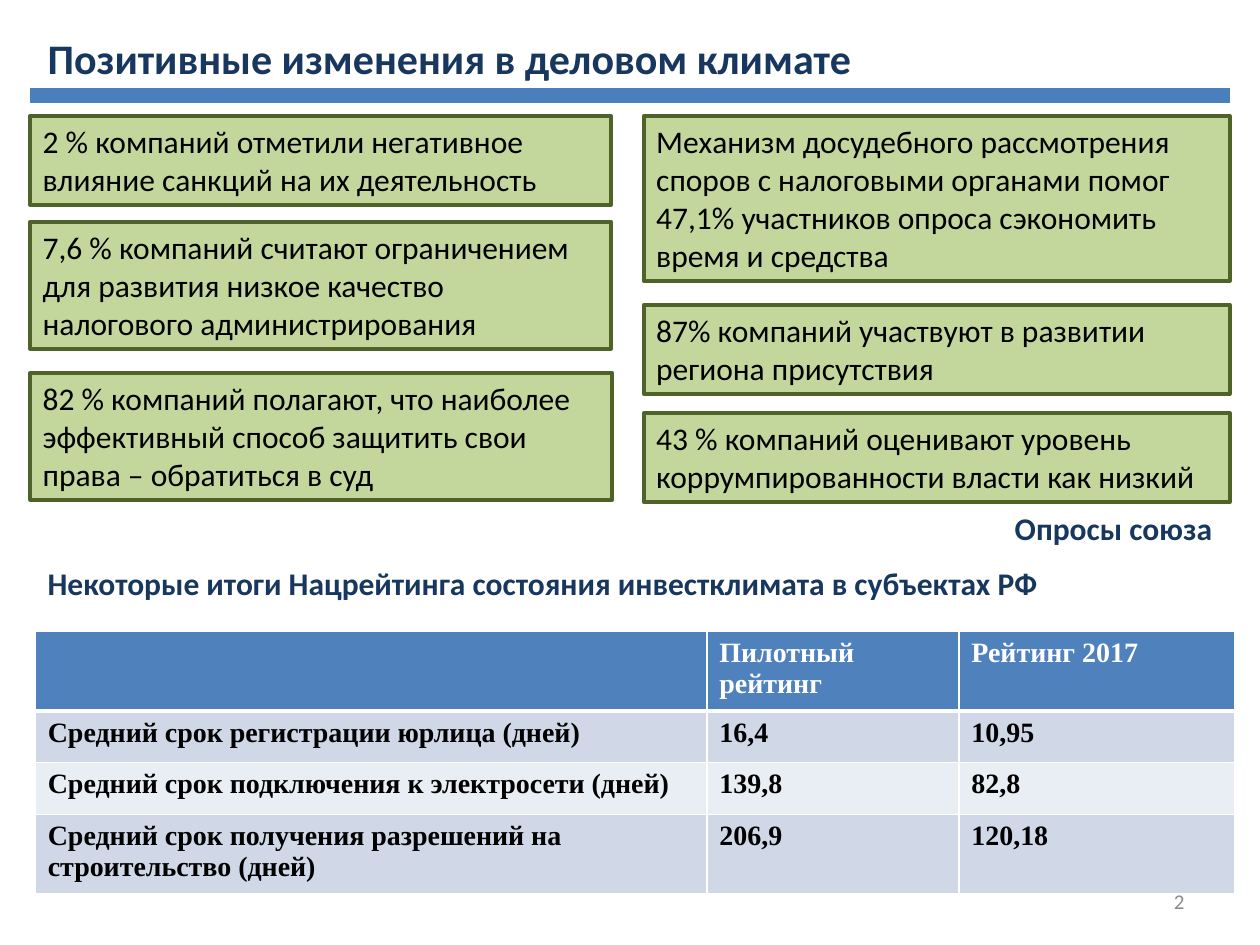
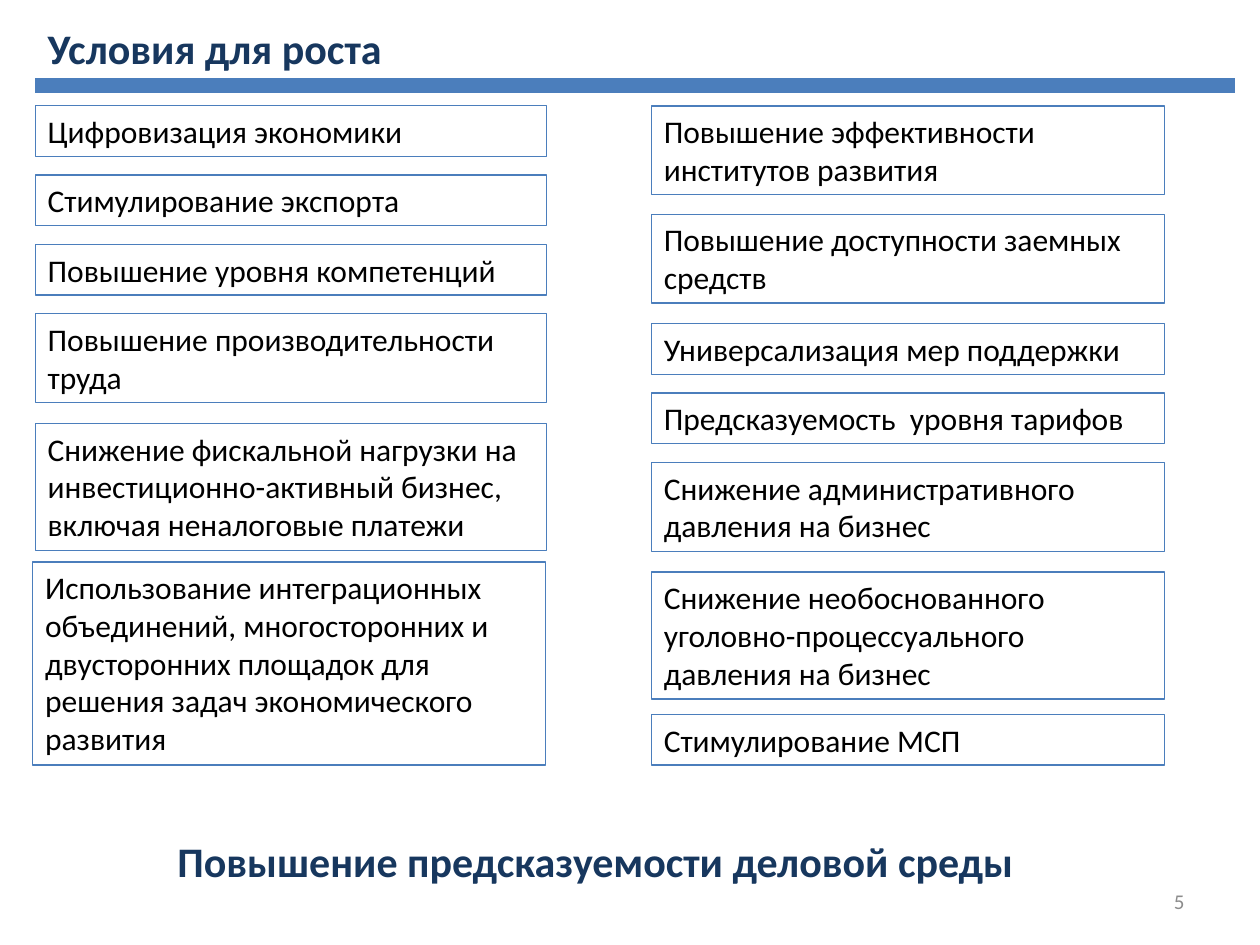
"""Build two slides on the business climate and the conditions for growth."""
import dataclasses

import lxml.etree
import pptx
import pptx.dml.color
import pptx.enum.shapes
import pptx.enum.text
import pptx.oxml.ns
import pptx.util

Inches = pptx.util.Inches
Pt = pptx.util.Pt
Color = pptx.dml.color.RGBColor.from_string
Align = pptx.enum.text.PP_ALIGN
Anchor = pptx.enum.text.MSO_ANCHOR
AutoSize = pptx.enum.text.MSO_AUTO_SIZE
qn = pptx.oxml.ns.qn


@dataclasses.dataclass(frozen=True)
class Theme:
    navy: str = "17375E"
    blue: str = "4B7EBC"
    black: str = "000000"
    white: str = "FFFFFF"
    gray: str = "8C8C8C"
    green: str = "C3D69B"
    olive: str = "4F6228"
    header: str = "4F81BD"
    bands: tuple = ("D0D8E8", "E9EDF4")
    font: str = "Calibri"
    table_font: str = "Times New Roman"
    title: int = 24
    body: int = 18
    table: int = 16
    number: int = 12
    line_spacing: float = 1.21
    band_width: float = 8.5


theme = Theme()
title_format = {"name": theme.font, "size": Pt(theme.title), "bold": True}
heading_format = {"name": theme.font, "size": Pt(theme.body), "bold": True}
body_format = {"name": theme.font, "size": Pt(theme.body)}
number_format = {"name": theme.font, "size": Pt(theme.number)}
table_format = {"name": theme.table_font, "size": Pt(theme.table), "bold": True}
line_height = theme.body * theme.line_spacing / 72


def write(frame, text, font_format, color, align=Align.LEFT):
    frame.word_wrap = True
    paragraph = frame.paragraphs[0]
    paragraph.alignment = align
    run = paragraph.add_run()
    run.text = text
    for name, value in font_format.items():
        setattr(run.font, name, value)
    run.font.color.rgb = Color(color)


def add_label(slide, box, text, font_format, color, align=Align.LEFT):
    shape = slide.shapes.add_textbox(*map(Inches, box))
    write(shape.text_frame, text, font_format, color, align)
    return shape


presentation = pptx.Presentation()
presentation.slide_width = Inches(10)
presentation.slide_height = Inches(7.5)

pages = [
    {
        "title": "Позитивные изменения в деловом климате",
        "number": "2",
        "title_top": 0.21,
        "band": (0.24, 0.76),
        "card_fill": theme.green,
        "card_line": (theme.olive, 2.25),
        "cards": [
            (0.24, 0.92, 4.61, 2, "2 % компаний отметили негативное влияние санкций на их деятельность"),
            (0.24, 1.76, 4.61, 3, "7,6 % компаний считают ограничением для развития низкое качество "
                                  "налогового администрирования"),
            (0.24, 2.96, 4.62, 3, "82 % компаний полагают, что наиболее эффективный способ защитить "
                                  "свои права – обратиться в суд"),
            (5.11, 0.92, 4.65, 4, "Механизм досудебного рассмотрения споров с налоговыми органами помог "
                                  "47,1% участников опроса сэкономить время и средства"),
            (5.11, 2.42, 4.65, 2, "87% компаний участвуют в развитии региона присутствия"),
            (5.11, 3.28, 4.65, 2, "43 % компаний оценивают уровень коррумпированности власти как низкий"),
        ],
        "labels": [
            ((7.36, 3.99, 2.36, 0.4), "Опросы союза", heading_format, theme.navy, Align.RIGHT),
            ((0.28, 4.43, 8.56, 0.4), "Некоторые итоги Нацрейтинга состояния инвестклимата в субъектах РФ",
             heading_format, theme.navy),
        ],
    },
    {
        "title": "Условия для роста",
        "number": "5",
        "title_top": 0.13,
        "band": (0.28, 0.68),
        "card_fill": None,
        "card_line": (theme.blue, 0.75),
        "cards": [
            (0.28, 0.84, 4.06, 1, "Цифровизация экономики"),
            (0.28, 1.39, 4.06, 1, "Стимулирование экспорта"),
            (0.28, 1.94, 4.06, 1, "Повышение уровня компетенций"),
            (0.28, 2.49, 4.06, 2, "Повышение производительности труда"),
            (0.28, 3.36, 4.06, 3, "Снижение фискальной нагрузки на инвестиционно-активный бизнес, "
                                  "включая неналоговые платежи"),
            (0.26, 4.46, 4.07, 5, "Использование интеграционных объединений, многосторонних и "
                                  "двусторонних площадок для решения задач экономического развития"),
            (5.17, 0.84, 4.07, 2, "Повышение эффективности институтов развития"),
            (5.17, 1.7, 4.07, 2, "Повышение доступности заемных средств"),
            (5.17, 2.57, 4.07, 1, "Универсализация мер поддержки"),
            (5.17, 3.12, 4.07, 1, "Предсказуемость  уровня тарифов"),
            (5.17, 3.67, 4.07, 2, "Снижение административного давления на бизнес"),
            (5.17, 4.54, 4.07, 3, "Снижение необоснованного уголовно-процессуального давления на бизнес"),
            (5.17, 5.67, 4.07, 1, "Стимулирование МСП"),
        ],
        "labels": [
            ((0.25, 6.58, 8.95, 0.5), "Повышение предсказуемости деловой среды",
             title_format, theme.navy, Align.CENTER),
        ],
    },
]

for page in pages:
    slide = presentation.slides.add_slide(presentation.slide_layouts[6])
    number = add_label(slide, (7.17, 6.95, 2.33, 0.4), page["number"], number_format, theme.gray, Align.RIGHT)
    number.text_frame.vertical_anchor = Anchor.MIDDLE
    add_label(slide, (0.28, page["title_top"], 8.27, 0.5), page["title"], title_format, theme.navy)

    left, top = page["band"]
    band = slide.shapes.add_connector(
        pptx.enum.shapes.MSO_CONNECTOR.STRAIGHT, Inches(left), Inches(top), Inches(left + 9.52), Inches(top))
    band.line.color.rgb = Color(theme.blue)
    band.line.width = Pt(theme.band_width)
    lxml.etree.SubElement(band.element.spPr, qn("a:effectLst"))

    line_color, line_width = page["card_line"]
    for left, top, width, line_count, text in page["cards"]:
        height = 0.1 + line_height * line_count
        card = slide.shapes.add_shape(
            pptx.enum.shapes.MSO_SHAPE.RECTANGLE, *map(Inches, (left, top, width, height)))
        card.shadow.inherit = False
        if page["card_fill"]:
            card.fill.solid()
            card.fill.fore_color.rgb = Color(page["card_fill"])
        else:
            card.fill.background()
        card.line.color.rgb = Color(line_color)
        card.line.width = Pt(line_width)
        card.text_frame.vertical_anchor = Anchor.TOP
        card.text_frame.auto_size = AutoSize.SHAPE_TO_FIT_TEXT
        write(card.text_frame, text, body_format, theme.black)

    for label in page["labels"]:
        add_label(slide, *label)

rating_rows = [
    ("", "Пилотный рейтинг", "Рейтинг 2017"),
    ("Средний срок регистрации юрлица (дней)", "16,4", "10,95"),
    ("Средний срок подключения к электросети (дней)", "139,8", "82,8"),
    ("Средний срок получения разрешений на строительство (дней)", "206,9", "120,18"),
]
column_widths = (5.33, 2, 2.19)
row_heights = (0.63, 0.41, 0.41, 0.63)
table = presentation.slides[0].shapes.add_table(
    len(rating_rows), len(column_widths),
    *map(Inches, (0.28, 5.01, sum(column_widths), sum(row_heights)))).table
for column, width in zip(table.columns, column_widths):
    column.width = Inches(width)
for row_index, texts in enumerate(rating_rows):
    table.rows[row_index].height = Inches(row_heights[row_index])
    is_header = row_index == 0
    fill_color = theme.header if is_header else theme.bands[(row_index - 1) % 2]
    text_color = theme.white if is_header else theme.black
    border_widths = {"L": 1, "R": 1, "T": 3 if row_index == 1 else 1, "B": 3 if is_header else 1}
    for column_index, text in enumerate(texts):
        cell = table.cell(row_index, column_index)
        properties = cell._tc.get_or_add_tcPr()
        for side, width in border_widths.items():
            border = lxml.etree.SubElement(properties, qn(f"a:ln{side}"), w=str(Pt(width)))
            border_fill = lxml.etree.SubElement(border, qn("a:solidFill"))
            lxml.etree.SubElement(border_fill, qn("a:srgbClr"), val=theme.white)
        cell.fill.solid()
        cell.fill.fore_color.rgb = Color(fill_color)
        if text:
            write(cell.text_frame, text, table_format, text_color)

presentation.save("out.pptx")
